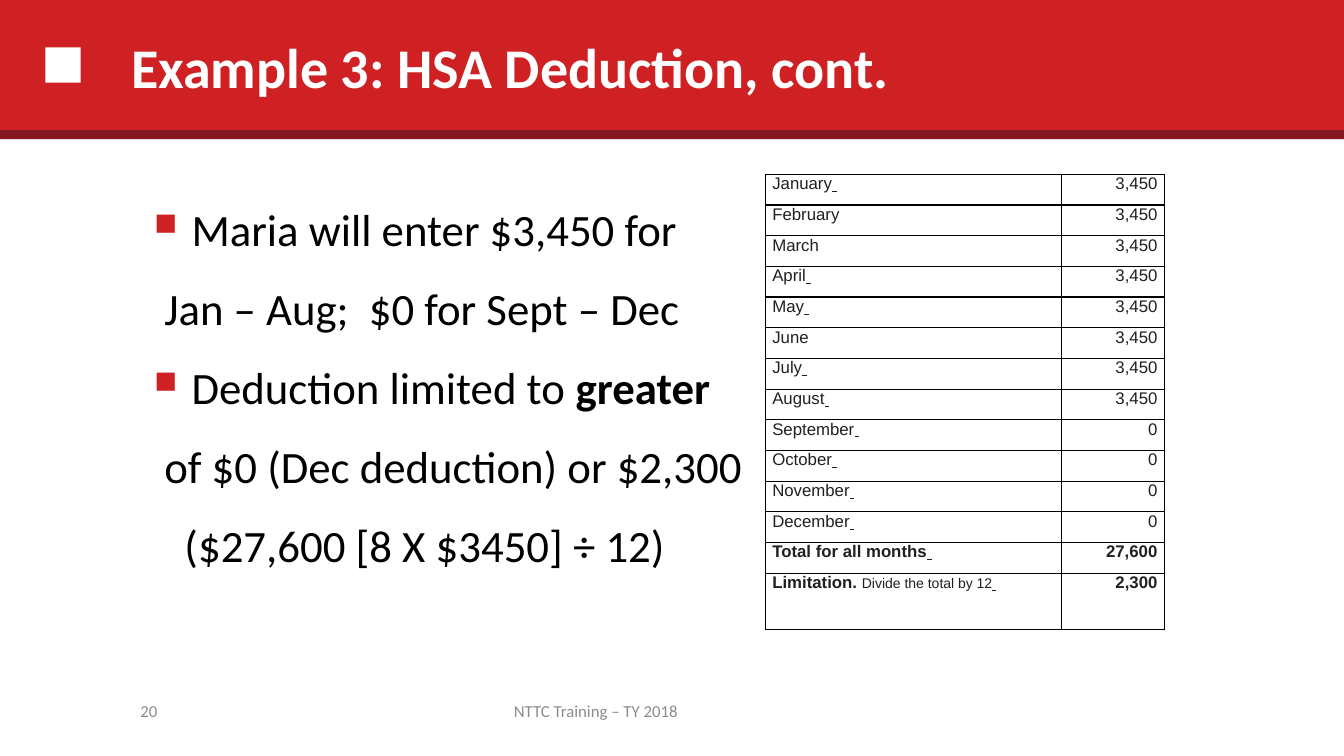
from dataclasses import dataclass

from lxml.etree import SubElement
from pptx import Presentation
from pptx.dml.color import RGBColor
from pptx.enum.shapes import MSO_SHAPE
from pptx.enum.text import MSO_ANCHOR, PP_ALIGN
from pptx.oxml.ns import qn
from pptx.util import Inches, Pt


@dataclass(frozen=True)
class Theme:
    red: str = "CF2124"
    dark: str = "841721"
    white: str = "FFFFFF"
    black: str = "000000"
    gray: str = "8C8C8C"
    ink: str = "231F20"
    main: str = "Calibri"
    grid: str = "Arial"
    title: int = 40
    body: int = 32
    cell: int = 12
    note: int = 10
    foot: int = 12


class Deck:
    def __init__(self, theme):
        self.theme = theme
        self.file = Presentation()
        self.file.slide_width = Inches(13.33)
        self.file.slide_height = Inches(7.5)
        self.slide = self.file.slides.add_slide(self.file.slide_layouts[6])

    def block(self, box, color):
        shape = self.slide.shapes.add_shape(MSO_SHAPE.RECTANGLE, *map(Inches, box))
        shape.shadow.inherit = False
        shape.fill.solid()
        shape.fill.fore_color.rgb = RGBColor.from_string(color)
        shape.line.fill.background()

    def frame(self, box, anchor=MSO_ANCHOR.MIDDLE):
        frame = self.slide.shapes.add_textbox(*map(Inches, box)).text_frame
        frame.word_wrap = True
        frame.vertical_anchor = anchor
        frame.margin_left = frame.margin_right = Inches(0.13)
        frame.margin_top = frame.margin_bottom = Inches(0.07)
        return frame

    def style(self, para, size, color, face=None, bold=None):
        font = para.font
        font.name = face or self.theme.main
        font.size = Pt(size)
        font.bold = bold
        font.color.rgb = RGBColor.from_string(color)

    def label(self, box, text, size, color, align=PP_ALIGN.LEFT, bold=None):
        para = self.frame(box).paragraphs[0]
        para.alignment = align
        para.add_run().text = text
        self.style(para, size, color, bold=bold)

    def bullet(self, props):
        color = SubElement(props, qn("a:buClr"))
        SubElement(color, qn("a:srgbClr"), val=self.theme.red)
        SubElement(props, qn("a:buSzPct"), val="70000")
        SubElement(props, qn("a:buChar"), char="■")

    def points(self, box, lines):
        frame = self.frame(box, MSO_ANCHOR.TOP)
        for i, (left, mark, text, strong) in enumerate(lines):
            para = frame.add_paragraph() if i else frame.paragraphs[0]
            props = para._p.get_or_add_pPr()
            props.set("marL", str(Inches(left)))
            props.set("indent", str(-Inches(left) if mark else 0))
            if i:
                para.space_before = Pt(18)
            if mark:
                self.bullet(props)
            else:
                SubElement(props, qn("a:buNone"))
            para.add_run().text = text
            if strong:
                run = para.add_run()
                run.text = strong
                run.font.bold = True
            self.style(para, self.theme.body, self.theme.black)

    def cell(self, cell, align, bold):
        props = cell._tc.get_or_add_tcPr()
        for side in "LRTB":
            line = SubElement(props, qn(f"a:ln{side}"), w=str(Pt(1)))
            fill = SubElement(line, qn("a:solidFill"))
            SubElement(fill, qn("a:srgbClr"), val=self.theme.black)
        cell.fill.solid()
        cell.fill.fore_color.rgb = RGBColor.from_string(self.theme.white)
        cell.margin_left = cell.margin_right = Inches(0.07)
        cell.margin_top = cell.margin_bottom = 0
        para = cell.text_frame.paragraphs[0]
        para.alignment = align
        self.style(para, self.theme.cell, self.theme.ink, self.theme.grid, bold)
        return para

    def table(self, box, widths, last, rows):
        shape = self.slide.shapes.add_table(len(rows), len(widths), *map(Inches, box))
        table = shape.table
        table.first_row = table.horz_banding = False
        for col, width in zip(table.columns, widths):
            col.width = Inches(width)
        for row in table.rows:
            row.height = Inches((box[3] - last) / (len(rows) - 1))
        table.rows[len(rows) - 1].height = Inches(last)
        for i, (name, note, value, bold, tail) in enumerate(rows):
            para = self.cell(table.cell(i, 0), PP_ALIGN.LEFT, bold)
            parts = [(name, self.theme.cell, bold, False)]
            if note:
                parts.append((note, self.theme.note, False, False))
            if tail:
                size = self.theme.note if note else self.theme.cell
                parts.append((" ", size, bold and not note, True))
            for text, size, heavy, under in parts:
                self.add(para, text, size, heavy, under)
            para = self.cell(table.cell(i, 1), PP_ALIGN.RIGHT, bold)
            self.add(para, f"{value:,}", self.theme.cell, bold)

    def add(self, para, text, size, bold, under=False):
        run = para.add_run()
        run.text = text
        font = run.font
        font.name = self.theme.grid
        font.size = Pt(size)
        font.bold = bold
        font.underline = under
        font.color.rgb = RGBColor.from_string(self.theme.ink)


def main():
    theme = Theme()
    deck = Deck(theme)

    # Header band
    deck.block((0, -0.01, 13.33, 1.33), theme.red)
    deck.block((0.45, 0.47, 0.35, 0.35), theme.white)
    deck.block((0, 1.29, 13.33, 0.09), theme.dark)
    deck.label((1.17, 0.03, 10.66, 1.25), "Example 3: HSA Deduction, cont.",
               theme.title, theme.white, bold=True)

    # Footer
    deck.label((3.8, 6.85, 4.22, 0.4), "NTTC Training – TY 2018",
               theme.foot, theme.gray, PP_ALIGN.CENTER)
    deck.label((0.67, 6.85, 1.02, 0.4), "20", theme.foot, theme.gray, PP_ALIGN.RIGHT)

    # Bullets: left indent, marked, text, bold ending
    deck.points((1.4, 1.93, 10.67, 4.4), [
        (0.37, True, "Maria will enter $3,450 for", ""),
        (0.1, False, "Jan – Aug;  $0 for Sept – Dec", ""),
        (0.37, True, "Deduction limited to ", "greater"),
        (0.1, False, "of $0 (Dec deduction) or $2,300", ""),
        (0.3, False, "($27,600 [8 X $3450] ÷ 12)", ""),
    ])

    # Monthly limits, with an underlined space after most names
    months = ["January", "February", "March", "April", "May", "June", "July",
              "August", "September", "October", "November", "December"]
    plain = {"February", "March", "June"}
    rows = [(month, "", 3450 if i < 8 else 0, False, month not in plain)
            for i, month in enumerate(months)]
    total = sum(row[2] for row in rows)
    rows.append(("Total for all months", "", total, True, True))
    rows.append(("Limitation. ", "Divide the total by 12", total // 12, True, True))
    deck.table((7.59, 1.73, 3.96, 4.52), (2.94, 1.02), 0.56, rows)

    deck.file.save("out.pptx")


if __name__ == "__main__":
    main()
